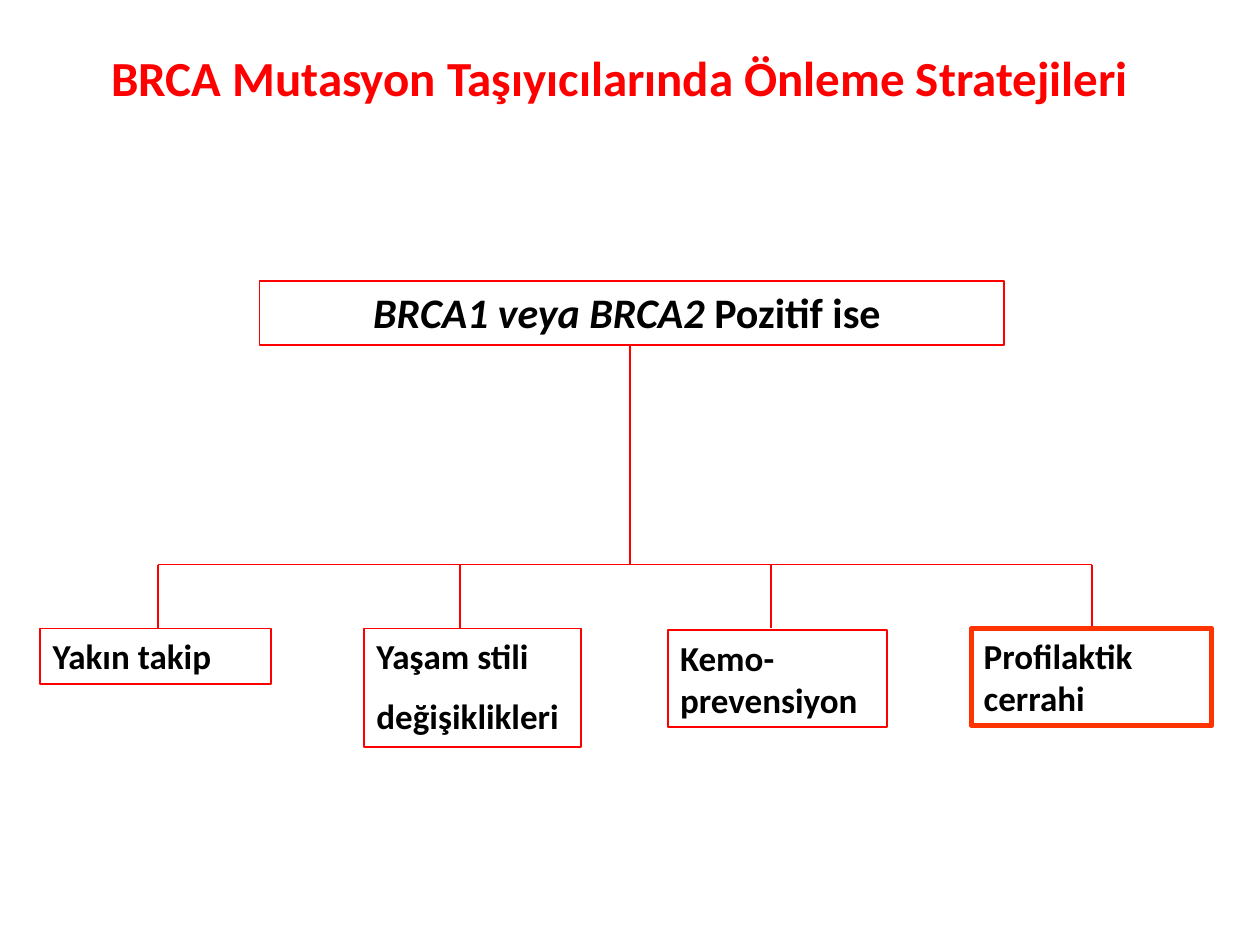
import pptx
import pptx.dml.color
import pptx.enum.shapes
import pptx.enum.text
import pptx.oxml.ns
import pptx.util
from lxml import etree

Cm = pptx.util.Cm
Pt = pptx.util.Pt
ALIGN = pptx.enum.text.PP_ALIGN

COLORS = {"red": "FF0000", "highlight": "FF3300", "text": "000000"}
FONT = "Calibri"

BRANCH_TOP, BRANCH_BOTTOM = 11.38, 12.65
TRUNK_X, TRUNK_TOP = 12.7, 6.93

# branch x, box left, top, width, height, paragraphs, line colour, line width
STRATEGIES = [
    (3.18, 0.81, 12.67, 4.65, 1.12, ["Yakın takip"], "red", 1),
    (9.27, 7.34, 12.67, 4.37, 2.39, ["Yaşam stili", "değişiklikleri"], "red", 1),
    (15.54, 13.46, 12.7, 4.42, 1.96, ["Kemo-prevensiyon"], "red", 1),
    (22.02, 19.58, 12.67, 4.85, 1.96, ["Profilaktik cerrahi"], "highlight", 3),
]


def rgb(name):
    return pptx.dml.color.RGBColor.from_string(COLORS[name])


def format_run(run, size, color="text", italic=False):
    run.font.name = FONT
    run.font.size = Pt(size)
    run.font.bold = True
    run.font.italic = italic
    run.font.color.rgb = rgb(color)


def prepare_frame(text_frame):
    text_frame.word_wrap = True
    text_frame.auto_size = pptx.enum.text.MSO_AUTO_SIZE.NONE
    text_frame.vertical_anchor = pptx.enum.text.MSO_ANCHOR.TOP


def add_title(slide, text):
    title = slide.shapes.title
    title.left, title.top, title.width, title.height = Cm(0.84), Cm(0.84), Cm(23.52), Cm(1.45)
    prepare_frame(title.text_frame)
    title.text_frame.text = text
    paragraph = title.text_frame.paragraphs[0]
    paragraph.alignment = ALIGN.CENTER
    format_run(paragraph.runs[0], 28, "red")


def add_box(slide, left, top, width, height, color="red", line_width=1):
    """Add an unfilled outlined rectangle and return its text frame."""
    box = slide.shapes.add_shape(
        pptx.enum.shapes.MSO_SHAPE.RECTANGLE, Cm(left), Cm(top), Cm(width), Cm(height))
    box.shadow.inherit = False
    box.fill.background()
    box.line.color.rgb = rgb(color)
    box.line.width = Pt(line_width)
    prepare_frame(box.text_frame)
    return box.text_frame


def add_condition(slide):
    paragraph = add_box(slide, 5.23, 5.66, 15.01, 1.3).paragraphs[0]
    paragraph.alignment = ALIGN.CENTER
    for text, italic in [("BRCA1 veya BRCA2 ", True), ("Pozitif ise ", False)]:
        run = paragraph.add_run()
        run.text = text
        format_run(run, 24, italic=italic)


def add_strategy(slide, left, top, width, height, lines, color, line_width):
    text_frame = add_box(slide, left, top, width, height, color, line_width)
    text_frame.text = "\n".join(lines)
    for index, paragraph in enumerate(text_frame.paragraphs):
        paragraph.alignment = ALIGN.LEFT
        if index:
            paragraph.space_before = Pt(10)
        format_run(paragraph.runs[0], 20)


def add_line(shapes, x1, y1, x2, y2):
    line = shapes.add_connector(
        pptx.enum.shapes.MSO_CONNECTOR.STRAIGHT, Cm(x1), Cm(y1), Cm(x2), Cm(y2))
    line.line.color.rgb = rgb("red")
    line.line.width = Pt(1)
    etree.SubElement(line._element.spPr, pptx.oxml.ns.qn("a:effectLst"))


def add_branches(slide):
    branches = [strategy[0] for strategy in STRATEGIES]
    group = slide.shapes.add_group_shape()
    add_line(group.shapes, branches[0], BRANCH_TOP, branches[-1], BRANCH_TOP)
    for x in branches:
        add_line(group.shapes, x, BRANCH_TOP, x, BRANCH_BOTTOM)
    add_line(slide.shapes, TRUNK_X, TRUNK_TOP, TRUNK_X, BRANCH_TOP)


def main():
    presentation = pptx.Presentation()
    presentation.slide_width, presentation.slide_height = Cm(25.4), Cm(19.05)
    slide = presentation.slides.add_slide(presentation.slide_layouts[5])
    add_title(slide, "BRCA Mutasyon Taşıyıcılarında Önleme Stratejileri ")
    add_condition(slide)
    add_branches(slide)
    for _, *box in STRATEGIES:
        add_strategy(slide, *box)
    presentation.save("out.pptx")


if __name__ == "__main__":
    main()
